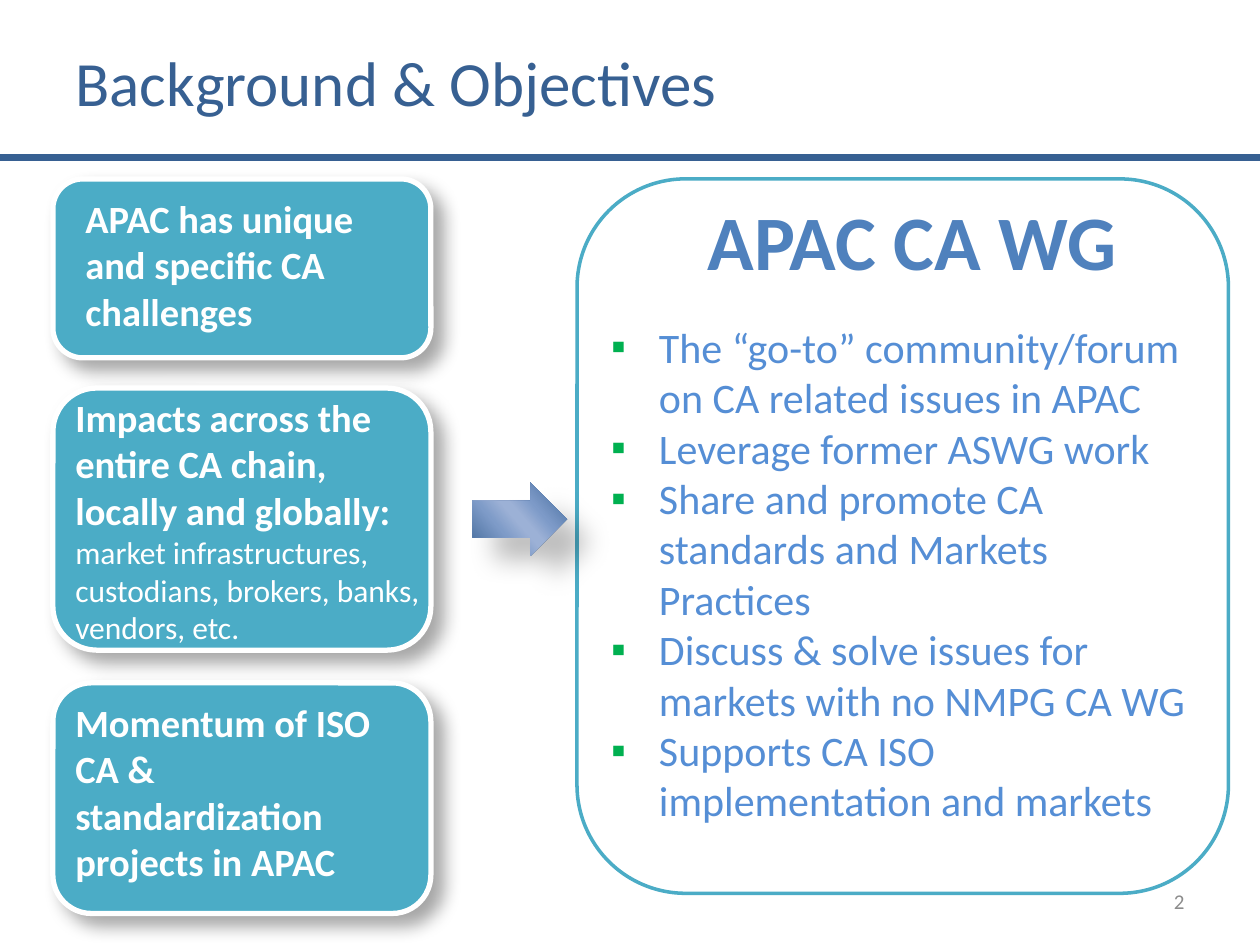
from lxml import etree
from pptx import Presentation
from pptx import util as u
from pptx.dml import color
from pptx.enum import shapes, text
from pptx.oxml import ns, parse_xml

FONT = "Calibri"
NAVY, TEAL, WHITE = "376092", "4BACC6", "FFFFFF"


def rgb(value):
    return color.RGBColor.from_string(value)


def inches(box):
    return [u.Inches(length) for length in box]


def place(placeholder, box):
    placeholder.left, placeholder.top, placeholder.width, placeholder.height = inches(box)


def add_run(paragraph, words, size, tint, bold=False):
    run = paragraph.add_run()
    run.text = words
    run.font.name = FONT
    run.font.size = u.Pt(size)
    run.font.bold = bold
    run.font.color.rgb = rgb(tint)


def add_label(slide, box, runs, align=text.PP_ALIGN.LEFT, wrap=True,
              anchor=text.MSO_ANCHOR.TOP):
    frame = slide.shapes.add_textbox(*inches(box)).text_frame
    frame.word_wrap = wrap
    frame.vertical_anchor = anchor
    paragraph = frame.paragraphs[0]
    paragraph.alignment = align
    for words, size, tint, bold in runs:
        add_run(paragraph, words, size, tint, bold)


def add_shadow(shape, opacity, blur, distance):
    effects = shape.element.spPr.find(ns.qn("a:effectLst"))
    outer = etree.SubElement(
        effects, ns.qn("a:outerShdw"), blurRad=str(u.Pt(blur)), dist=str(u.Pt(distance)),
        dir=str(45 * 60000), algn="tl", rotWithShape="0")
    black = etree.SubElement(outer, ns.qn("a:srgbClr"), val="000000")
    etree.SubElement(black, ns.qn("a:alpha"), val=str(opacity * 1000))


def add_rounded(slide, box, fill, line, weight):
    rounded = slide.shapes.add_shape(shapes.MSO_SHAPE.ROUNDED_RECTANGLE, *inches(box))
    rounded.shadow.inherit = False
    rounded.fill.solid()
    rounded.fill.fore_color.rgb = rgb(fill)
    rounded.line.color.rgb = rgb(line)
    rounded.line.width = u.Pt(weight)
    return rounded


def add_header(slide, box, words):
    title = slide.shapes.title
    place(title, box)
    title.text_frame.vertical_anchor = text.MSO_ANCHOR.MIDDLE
    paragraph = title.text_frame.paragraphs[0]
    paragraph.alignment = text.PP_ALIGN.LEFT
    add_run(paragraph, words, 36, NAVY)
    rule = slide.shapes.add_connector(
        shapes.MSO_CONNECTOR.STRAIGHT, *inches((0, 1.25, 10, 1.25)))
    rule.line.color.rgb = rgb(NAVY)
    rule.line.width = u.Pt(3.5)
    etree.SubElement(rule.element.spPr, ns.qn("a:effectLst"))


def add_driver(slide, box, inset, heading, detail=""):
    left, top, width, height = box
    add_shadow(add_rounded(slide, box, TEAL, WHITE, 3), 35, 10.2, 8)
    dx, dy, label_width = inset
    runs = [(heading, 22, WHITE, True)]
    if detail:
        runs.append((detail, 18, WHITE, False))
    add_label(slide, (left + dx, top + dy, label_width, height - dy), runs)


def add_arrow(slide, box):
    arrow = slide.shapes.add_shape(shapes.MSO_SHAPE.RIGHT_ARROW, *inches(box))
    arrow.shadow.inherit = False
    arrow.line.fill.background()
    stops = [(0, "3F6797"), (33, "7D9AC8"), (47, "9CB1D6"),
             (53, "9CB1D6"), (68, "7E9BC8"), (100, "3F6797")]
    stop_xml = "".join(
        f'<a:gs pos="{position * 1000}"><a:srgbClr val="{tint}"/></a:gs>'
        for position, tint in stops)
    gradient = parse_xml(
        f'<a:gradFill {ns.nsdecls("a")} rotWithShape="1"><a:gsLst>{stop_xml}</a:gsLst>'
        f'<a:lin ang="{139 * 60000}" scaled="0"/></a:gradFill>')
    arrow.element.spPr.find(ns.qn("a:prstGeom")).addnext(gradient)
    add_shadow(arrow, 26, 15, 18)


def set_bullet(paragraph):
    properties = paragraph._p.get_or_add_pPr()
    indent = u.Inches(0.38)
    properties.set("marL", str(indent))
    properties.set("indent", str(-indent))
    tint = etree.SubElement(properties, ns.qn("a:buClr"))
    etree.SubElement(tint, ns.qn("a:srgbClr"), val="00B050")
    etree.SubElement(properties, ns.qn("a:buChar"), char="▪")


def add_objectives(slide, box, heading, objectives):
    left, top, width, height = box
    add_rounded(slide, box, WHITE, TEAL, 2)
    add_label(slide, (left + 0.92, top + 0.07, 3.48, 0.84),
              [(heading, 44, "4F81BD", True)], text.PP_ALIGN.CENTER, wrap=False)
    body = slide.placeholders[1]
    place(body, (left + 0.17, top + 1.08, width - 0.34, 4.75))
    slide.shapes._spTree.append(body.element)
    frame = body.text_frame
    frame.auto_size = text.MSO_AUTO_SIZE.NONE
    frame.vertical_anchor = text.MSO_ANCHOR.TOP
    for index, objective in enumerate(objectives):
        paragraph = frame.add_paragraph() if index else frame.paragraphs[0]
        paragraph.space_before = u.Pt(0)
        set_bullet(paragraph)
        add_run(paragraph, objective, 24, "558ED5")


def main():
    deck = Presentation()
    deck.slide_width, deck.slide_height = inches((10, 7.5))
    slide = deck.slides.add_slide(deck.slide_layouts[1])
    add_header(slide, (0.5, 0.17, 9, 0.95), "Background & Objectives")
    add_objectives(slide, (4.58, 1.42, 5.17, 5.67), "APAC CA WG", [
        "The “go-to” community/forum on CA related issues in APAC",
        "Leverage former ASWG work",
        "Share and promote CA standards and Markets Practices",
        "Discuss & solve issues for markets with no NMPG CA WG",
        "Supports CA ISO implementation and markets",
    ])
    drivers = [
        (1.42, 1.42, (0.16, 0.08, 2.83), "APAC has unique and specific CA challenges", ""),
        (3.08, 2.08, (0.08, 0, 3), "Impacts across the entire CA chain, locally and globally: ",
         "market infrastructures, custodians, brokers, banks, vendors, etc."),
        (5.42, 1.83, (0.08, 0.08, 2.83),
         "Momentum of ISO CA & standardization projects in APAC", ""),
    ]
    for top, height, inset, heading, detail in drivers:
        add_driver(slide, (0.42, top, 3, height), inset, heading, detail)
    add_arrow(slide, (3.75, 3.83, 0.75, 0.58))
    add_label(slide, (7.17, 6.95, 2.33, 0.4), [("2", 12, "8C8C8C", False)],
              text.PP_ALIGN.RIGHT, anchor=text.MSO_ANCHOR.MIDDLE)
    deck.save("out.pptx")


if __name__ == "__main__":
    main()
